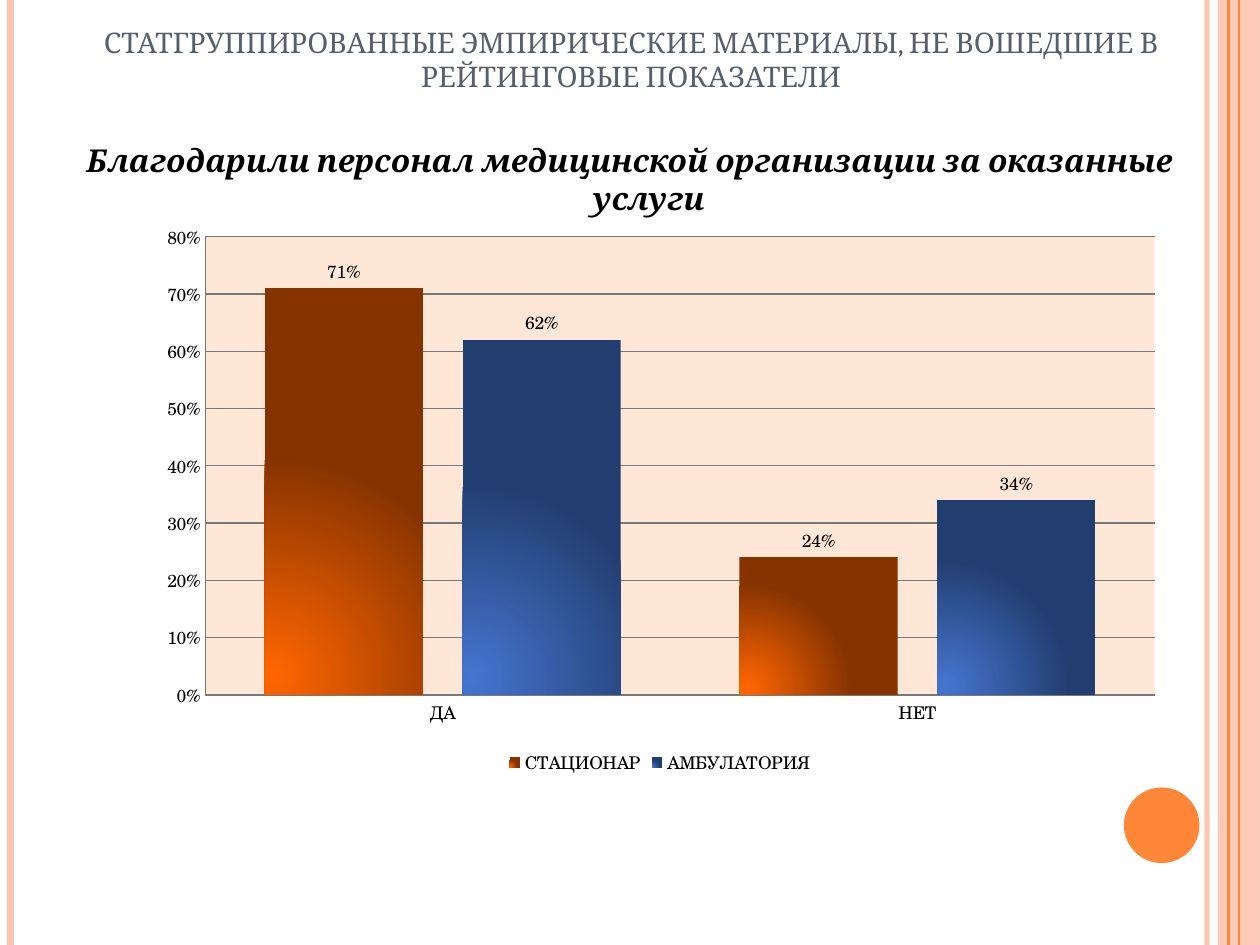
from pptx import Presentation
from pptx.chart.data import CategoryChartData
from pptx.dml.color import RGBColor
from pptx.enum.chart import (XL_CHART_TYPE as ChartType, XL_LABEL_POSITION as LabelPosition,
                             XL_LEGEND_POSITION as LegendPosition, XL_TICK_MARK as TickMark)
from pptx.enum.shapes import MSO_CONNECTOR as Connector, MSO_SHAPE as Shape
from pptx.enum.text import MSO_ANCHOR as Anchor, MSO_AUTO_SIZE as AutoSize, PP_ALIGN as Align
from pptx.oxml import parse_xml
from pptx.oxml.ns import nsdecls, qn
from pptx.util import Pt
from lxml.etree import SubElement

WIDTH, HEIGHT = 720, 540
ORANGE, PEACH = "FE8637", "FEC3AE"


def color(value):
    return RGBColor.from_string(value)


def set_alpha(properties, percent):
    for fill_color in properties.iter(qn("a:srgbClr")):
        SubElement(fill_color, qn("a:alpha")).set("val", str(percent * 1000))


def place(shape, box):
    shape.left, shape.top, shape.width, shape.height = (Pt(value) for value in box)


def add_solid(slide, preset, box, fill):
    shape = slide.shapes.add_shape(preset, *(Pt(value) for value in box))
    shape.shadow.inherit = False
    shape.fill.solid()
    shape.fill.fore_color.rgb = color(fill)
    shape.line.fill.background()
    return shape


def add_stripe(slide, x, stroke, weight, alpha=100):
    stripe = slide.shapes.add_connector(Connector.STRAIGHT, Pt(x), 0, Pt(x), Pt(HEIGHT))
    stripe.line.color.rgb = color(stroke)
    stripe.line.width = Pt(weight)
    properties = stripe._element.spPr
    if alpha < 100:
        set_alpha(properties, alpha)
    SubElement(properties, qn("a:effectLst"))


def add_side_decoration(slide):
    add_stripe(slide, 689.8, PEACH, 3, 93)
    add_stripe(slide, 6, PEACH, 4.5)
    band = add_solid(slide, Shape.RECTANGLE, (696, 0, 24, HEIGHT), PEACH)
    set_alpha(band._element.spPr, 87)
    add_stripe(slide, 702, ORANGE, 1.5)
    add_stripe(slide, 708, ORANGE, 0.75)
    add_solid(slide, Shape.OVAL, (642.25, 450, 43.2, 43.2), ORANGE)


def fill_placeholder(placeholder, box, text, size, text_color, anchor):
    place(placeholder, box)
    frame = placeholder.text_frame
    frame.auto_size = AutoSize.NONE
    frame.word_wrap = True
    frame.vertical_anchor = anchor
    frame.text = text
    paragraph = frame.paragraphs[0]
    paragraph.alignment = Align.CENTER
    paragraph.font.name = "Cambria"
    paragraph.font.size = Pt(size)
    paragraph.font.color.rgb = color(text_color)
    return paragraph


def add_heading(slide, box):
    fill_placeholder(
        slide.shapes.title, box,
        "СТАТГРУППИРОВАННЫЕ ЭМПИРИЧЕСКИЕ МАТЕРИАЛЫ, НЕ ВОШЕДШИЕ В РЕЙТИНГОВЫЕ ПОКАЗАТЕЛИ",
        16.2, "575F6D", Anchor.MIDDLE)


def add_question(slide, box):
    paragraph = fill_placeholder(
        slide.placeholders[1], box,
        "Благодарили персонал медицинской организации за оказанные услуги",
        18, "000000", Anchor.TOP)
    paragraph.font.bold = paragraph.font.italic = True
    paragraph.space_before = Pt(6)
    properties = paragraph._p.get_or_add_pPr()
    properties.set("marL", str(Pt(21.6)))
    properties.set("indent", str(-Pt(21.6)))
    SubElement(properties, qn("a:buNone"))
    # The schema wants the bullet before the default run properties
    properties.append(properties.find(qn("a:defRPr")))


def set_radial_fill(series, inner, outer):
    """Glow from the lower left corner of each bar."""
    properties = series._element.get_or_add_spPr()
    properties.append(parse_xml(
        f'<a:gradFill {nsdecls("a")} rotWithShape="1"><a:gsLst>'
        f'<a:gs pos="0"><a:srgbClr val="{inner}"/></a:gs>'
        f'<a:gs pos="100000"><a:srgbClr val="{outer}"/></a:gs></a:gsLst>'
        '<a:path path="circle"><a:fillToRect l="5000" t="95000" r="95000" b="5000"/></a:path>'
        '</a:gradFill>'))


def set_plot_area(chart, fill, x, y, width, height):
    plot_area = chart._chartSpace.chart.plotArea
    for layout in plot_area.findall(qn("c:layout")):
        plot_area.remove(layout)
    values = "".join(f'<c:{tag} val="{value}"/>' for tag, value in
                     (("x", x), ("y", y), ("w", width), ("h", height)))
    plot_area.insert(0, parse_xml(
        f'<c:layout {nsdecls("c")}><c:manualLayout><c:layoutTarget val="inner"/>'
        f'<c:xMode val="edge"/><c:yMode val="edge"/>{values}</c:manualLayout></c:layout>'))
    plot_area.append(parse_xml(
        f'<c:spPr {nsdecls("c", "a")}><a:solidFill><a:srgbClr val="{fill}"/></a:solidFill></c:spPr>'))


def add_thanks_chart(slide, box):
    data = CategoryChartData(number_format="0%")
    data.categories = ["ДА", "НЕТ"]
    data.add_series("СТАЦИОНАР", (0.71, 0.24))
    data.add_series("АМБУЛАТОРИЯ", (0.62, 0.34))
    chart = slide.shapes.add_chart(
        ChartType.COLUMN_CLUSTERED, *(Pt(value) for value in box), data).chart
    chart.has_title = False
    chart.font.name = "TeX Gyre Schola"
    chart.font.size = Pt(10)
    chart.font.color.rgb = color("000000")

    # Bars and their labels
    plot = chart.plots[0]
    plot.gap_width, plot.overlap = 75, -25
    plot.vary_by_categories = False
    plot.has_data_labels = True
    labels = plot.data_labels
    labels.show_value = True
    labels.number_format, labels.number_format_is_linked = "0%", False
    labels.position = LabelPosition.OUTSIDE_END
    for series, shades in zip(plot.series, (("FF6600", "863300"), ("4675D0", "223E70"))):
        set_radial_fill(series, *shades)

    # Axes, grid and legend
    value_axis = chart.value_axis
    value_axis.minimum_scale, value_axis.maximum_scale, value_axis.major_unit = 0, 0.8, 0.1
    value_axis.tick_labels.number_format = "0%"
    value_axis.tick_labels.number_format_is_linked = False
    for axis in (chart.category_axis, value_axis):
        axis.major_tick_mark = axis.minor_tick_mark = TickMark.NONE
        axis.format.line.color.rgb = color("787878")
    grid_line = value_axis.major_gridlines.format.line
    grid_line.color.rgb = color("787878")
    grid_line.width = Pt(0.75)
    chart.has_legend = True
    chart.legend.position = LegendPosition.BOTTOM
    chart.legend.include_in_layout = False
    set_plot_area(chart, "FFE7D7", 0.06, 0.04, 0.92, 0.81)


def main():
    presentation = Presentation()
    presentation.slide_width, presentation.slide_height = Pt(WIDTH), Pt(HEIGHT)
    slide = presentation.slides.add_slide(presentation.slide_layouts[1])
    add_side_decoration(slide)
    add_heading(slide, (36.5, 9, 648, 50))
    add_question(slide, (36, 77, 648, 396))
    add_thanks_chart(slide, (82, 122.4, 589.7, 323.3))
    presentation.save("out.pptx")


if __name__ == "__main__":
    main()
